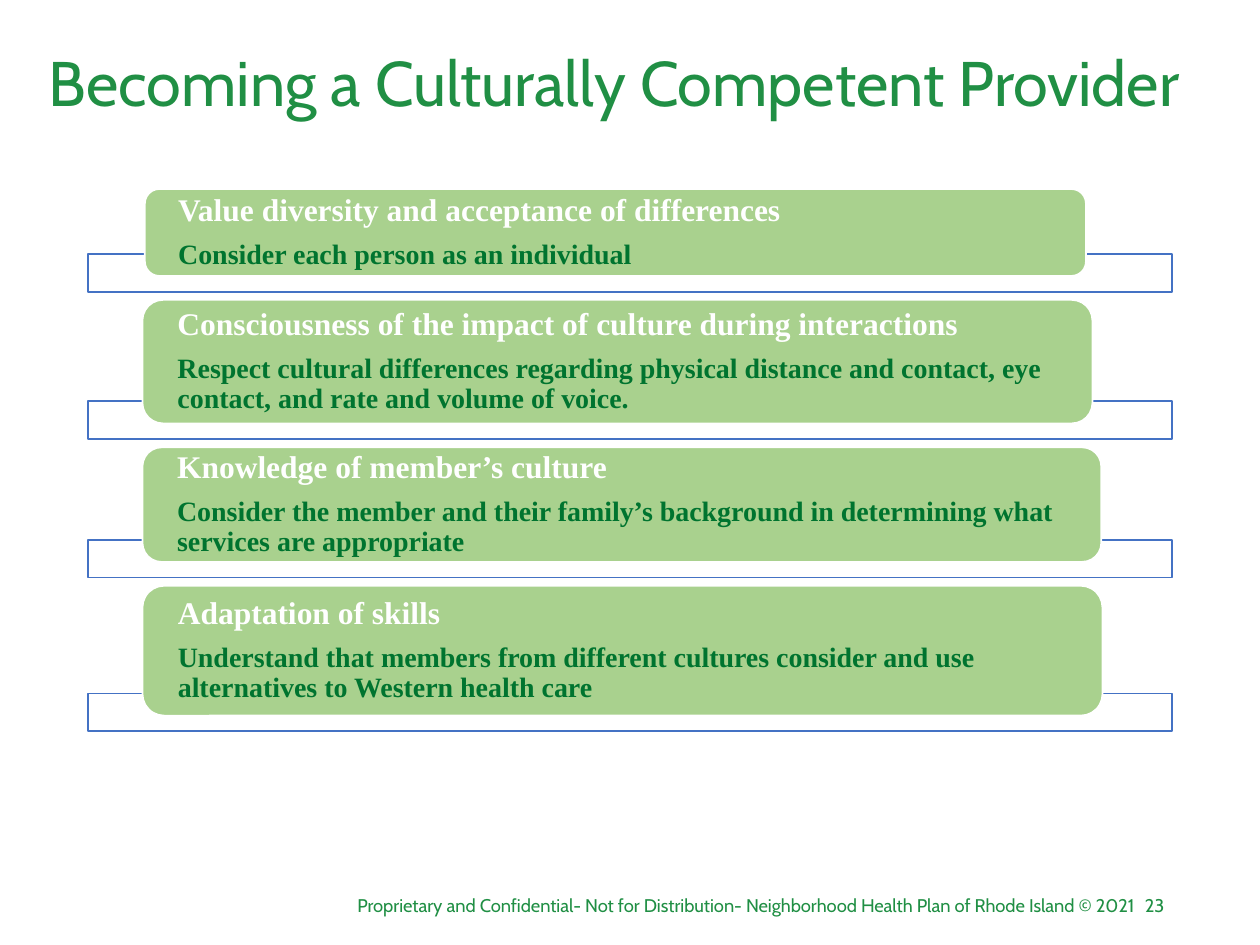
from dataclasses import dataclass

from lxml import etree
from pptx import Presentation
from pptx.dml.color import RGBColor
from pptx.enum.shapes import MSO_SHAPE
from pptx.enum.text import MSO_ANCHOR, PP_ALIGN
from pptx.oxml.ns import qn
from pptx.util import Pt

RECT, ROUND = MSO_SHAPE.RECTANGLE, MSO_SHAPE.ROUNDED_RECTANGLE
LEFT, CENTER, RIGHT = PP_ALIGN.LEFT, PP_ALIGN.CENTER, PP_ALIGN.RIGHT
TOP, MIDDLE = MSO_ANCHOR.TOP, MSO_ANCHOR.MIDDLE


@dataclass(frozen=True)
class Style:
    font: str
    size: float
    color: str
    bold: bool = False


@dataclass(frozen=True)
class Theme:
    title: Style = Style("Cabin", 36, "208F44")
    foot: Style = Style("Cabin", 10.5, "208F44")
    head: Style = Style("Times New Roman", 18, "FFFFFF", True)
    body: Style = Style("Times New Roman", 16, "00742F", True)
    card: str = "A9D18E"
    white: str = "FFFFFF"
    edge: str = "4472C4"


@dataclass(frozen=True)
class Box:
    left: float
    top: float
    width: float
    height: float

    def lengths(self) -> tuple:
        return Pt(self.left), Pt(self.top), Pt(self.width), Pt(self.height)


@dataclass(frozen=True)
class Card:
    left: float
    width: float
    height: float
    head: str
    body: str


THEME = Theme()
FIRST_TOP = 108
CARD_GAP = 13.65
BAR_LEFT, BAR_WIDTH, BAR_HEIGHT = 50.4, 619.2, 21.6
BAR_LAP = 12.6  # how far each card reaches down over its bar
CARDS = [
    Card(82.8, 537.8, 49.7, "Value diversity and acceptance of differences",
         "Consider each person as an individual"),
    Card(81.4, 542.9, 70.6, "Consciousness of the impact of culture during interactions",
         "Respect cultural differences regarding physical distance and contact, "
         "eye contact, and rate and volume of voice."),
    Card(81.4, 547.9, 65.5, "Knowledge of member’s culture",
         "Consider the member and their family’s background in determining "
         "what services are appropriate"),
    Card(81.4, 548.6, 74.2, "Adaptation of skills",
         "Understand that members from different cultures consider and use "
         "alternatives to Western health care"),
]


def add_run(para, text: str, style: Style) -> None:
    run = para.add_run()
    run.text = text
    font = run.font
    font.name, font.size, font.bold = style.font, Pt(style.size), style.bold
    font.color.rgb = RGBColor.from_string(style.color)


def add_text(slide, box: Box, text: str, style: Style, align, anchor, spacing: float) -> None:
    frame = slide.shapes.add_textbox(*box.lengths()).text_frame
    frame.word_wrap = True
    frame.vertical_anchor = anchor
    para = frame.paragraphs[0]
    para.alignment, para.line_spacing = align, spacing
    add_run(para, text, style)


def add_shape(slide, kind, box: Box, fill: str, line: str):
    shape = slide.shapes.add_shape(kind, *box.lengths())
    shape.shadow.inherit = False
    shape.fill.solid()
    shape.fill.fore_color.rgb = RGBColor.from_string(fill)
    shape.line.color.rgb = RGBColor.from_string(line)
    shape.line.width = Pt(1)
    return shape


def add_bar(slide, top: float) -> None:
    """Draw the outlined bar behind a card, with a 90% opaque fill."""
    box = Box(BAR_LEFT, top, BAR_WIDTH, BAR_HEIGHT)
    bar = add_shape(slide, RECT, box, THEME.white, THEME.edge)
    color = bar.fill._xPr.find(qn("a:solidFill"))[0]
    etree.SubElement(color, qn("a:alpha"), val="90000")


def add_card(slide, card: Card, top: float) -> None:
    box = Box(card.left, top, card.width, card.height)
    frame = add_shape(slide, ROUND, box, THEME.card, THEME.white).text_frame
    frame.word_wrap = True
    frame.vertical_anchor = MIDDLE
    frame.margin_left = frame.margin_right = Pt(16.6)
    frame.margin_top = frame.margin_bottom = Pt(0)
    lines = [(card.head, THEME.head), (card.body, THEME.body)]
    for i, (text, style) in enumerate(lines):
        para = frame.add_paragraph() if i else frame.paragraphs[0]
        para.alignment, para.line_spacing = LEFT, 0.9
        para.space_after = Pt(7)
        add_run(para, text, style)


def main() -> None:
    deck = Presentation()
    deck.slide_width, deck.slide_height = Pt(720), Pt(540)
    slide = deck.slides.add_slide(deck.slide_layouts[6])

    add_text(slide, Box(639.4, 507.6, 33.1, 20.2), "23", THEME.foot, RIGHT, TOP, 1.0)
    add_text(slide, Box(180, 507.6, 475.9, 20.2),
             "Proprietary and Confidential- Not for Distribution- "
             "Neighborhood Health Plan of Rhode Island © 2021",
             THEME.foot, RIGHT, TOP, 1.0)

    top = FIRST_TOP
    for card in CARDS:
        add_bar(slide, top + card.height - BAR_LAP)
        add_card(slide, card, top)
        top += card.height + CARD_GAP

    add_text(slide, Box(13.7, 4.3, 674.6, 90), "Becoming a Culturally Competent Provider",
             THEME.title, CENTER, MIDDLE, 0.9)
    deck.save("out.pptx")


if __name__ == "__main__":
    main()
